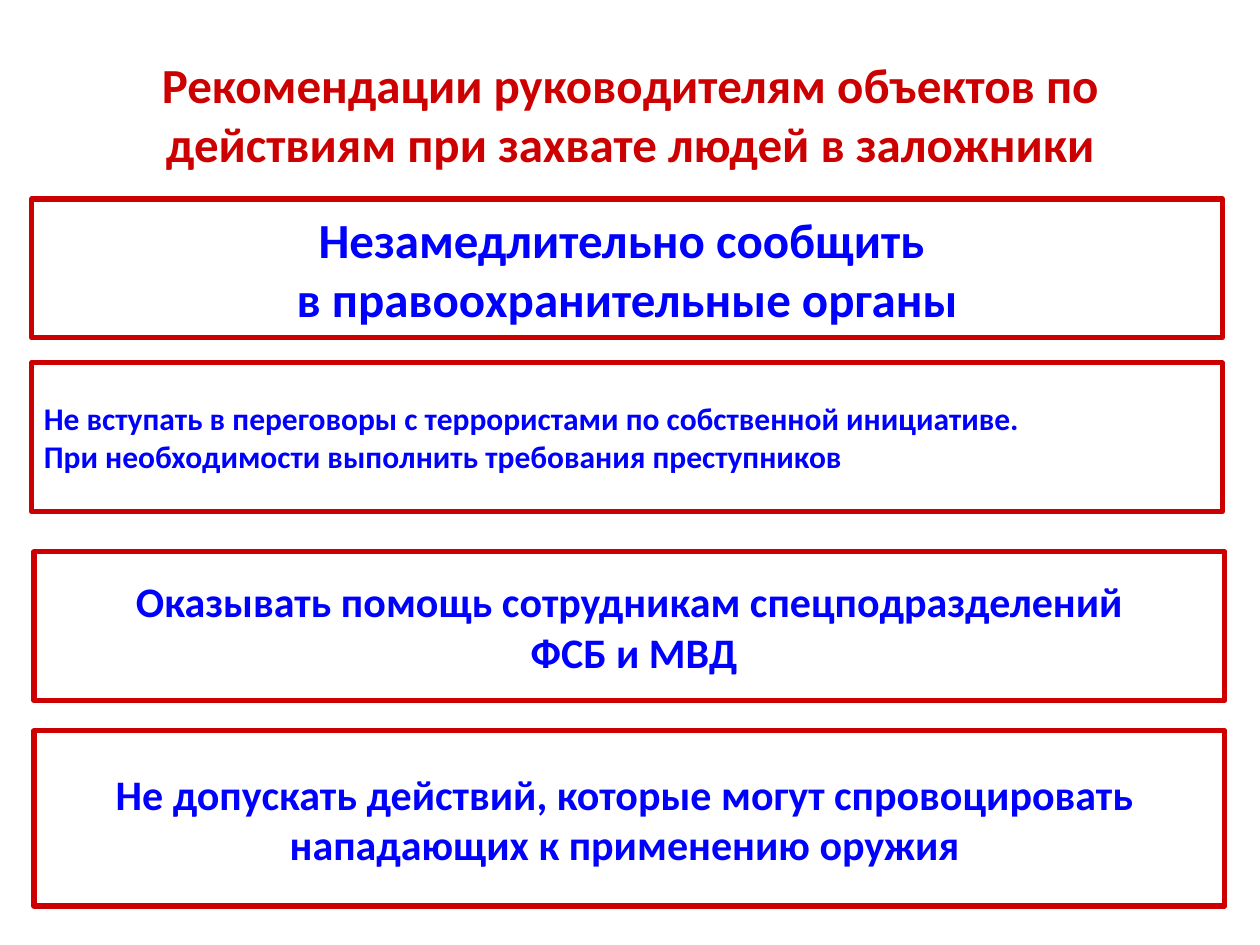
from pptx import Presentation
from pptx.dml.color import RGBColor
from pptx.enum.shapes import MSO_SHAPE
from pptx.enum.text import MSO_ANCHOR, MSO_AUTO_SIZE, PP_ALIGN
from pptx.util import Inches, Pt

RED = RGBColor(0xCC, 0x00, 0x00)
BLUE = RGBColor(0x00, 0x00, 0xFF)
WHITE = RGBColor(0xFF, 0xFF, 0xFF)
FONT = "Calibri"

SLIDE_WIDTH, SLIDE_HEIGHT = 10, 7.5
MARGIN = 0.25
PANEL_WIDTH = 9.45
LOWER_INDENT = 0.02  # the two lower panels sit slightly to the right

TITLE = "Рекомендации руководителям объектов по действиям при захвате людей в заложники"

# Top, height, left shift, text size, alignment, lines
PANELS = [
    (1.58, 1.1, 0, 28, PP_ALIGN.CENTER,
     ["Незамедлительно сообщить ", "в правоохранительные органы"]),
    (2.88, 1.18, 0, 18, PP_ALIGN.LEFT,
     ["Не вступать в переговоры с террористами по собственной инициативе.",
      "При необходимости выполнить требования преступников"]),
    (4.38, 1.18, LOWER_INDENT, 24, PP_ALIGN.CENTER,
     ["Оказывать помощь сотрудникам спецподразделений", " ФСБ и МВД"]),
    (5.8, 1.39, LOWER_INDENT, 24, PP_ALIGN.CENTER,
     ["Не допускать действий, которые могут спровоцировать ",
      "нападающих к применению оружия "]),
]


def place(shape, box):
    shape.left, shape.top, shape.width, shape.height = map(Inches, box)


def write_lines(text_frame, lines, size, color, alignment):
    for index, line in enumerate(lines):
        paragraph = text_frame.paragraphs[0] if index == 0 else text_frame.add_paragraph()
        paragraph.alignment = alignment
        paragraph.line_spacing = 1.0
        paragraph.space_before = Pt(0)
        run = paragraph.add_run()
        run.text = line
        run.font.name = FONT
        run.font.size = Pt(size)
        run.font.bold = True
        run.font.color.rgb = color


def add_title(slide, box):
    title = slide.shapes.title
    place(title, box)
    text_frame = title.text_frame
    text_frame.word_wrap = True
    text_frame.auto_size = MSO_AUTO_SIZE.NONE
    text_frame.vertical_anchor = MSO_ANCHOR.TOP
    write_lines(text_frame, [TITLE], 28, RED, PP_ALIGN.CENTER)


def add_panel(slide, box, size, alignment, lines):
    panel = slide.shapes.add_shape(MSO_SHAPE.RECTANGLE, *map(Inches, box))
    panel.shadow.inherit = False
    panel.fill.solid()
    panel.fill.fore_color.rgb = WHITE
    panel.line.color.rgb = RED
    panel.line.width = Pt(3)
    text_frame = panel.text_frame
    text_frame.word_wrap = False
    text_frame.vertical_anchor = MSO_ANCHOR.MIDDLE
    write_lines(text_frame, lines, size, BLUE, alignment)


def main():
    presentation = Presentation()
    presentation.slide_width = Inches(SLIDE_WIDTH)
    presentation.slide_height = Inches(SLIDE_HEIGHT)
    slide = presentation.slides.add_slide(presentation.slide_layouts.get_by_name("Title Only"))

    # Heading
    add_title(slide, (MARGIN, 0.38, SLIDE_WIDTH - 2 * MARGIN, 1.03))

    # Stack of framed recommendations
    for top, height, shift, size, alignment, lines in PANELS:
        add_panel(slide, (MARGIN + shift, top, PANEL_WIDTH, height), size, alignment, lines)

    presentation.save("out.pptx")


if __name__ == "__main__":
    main()
